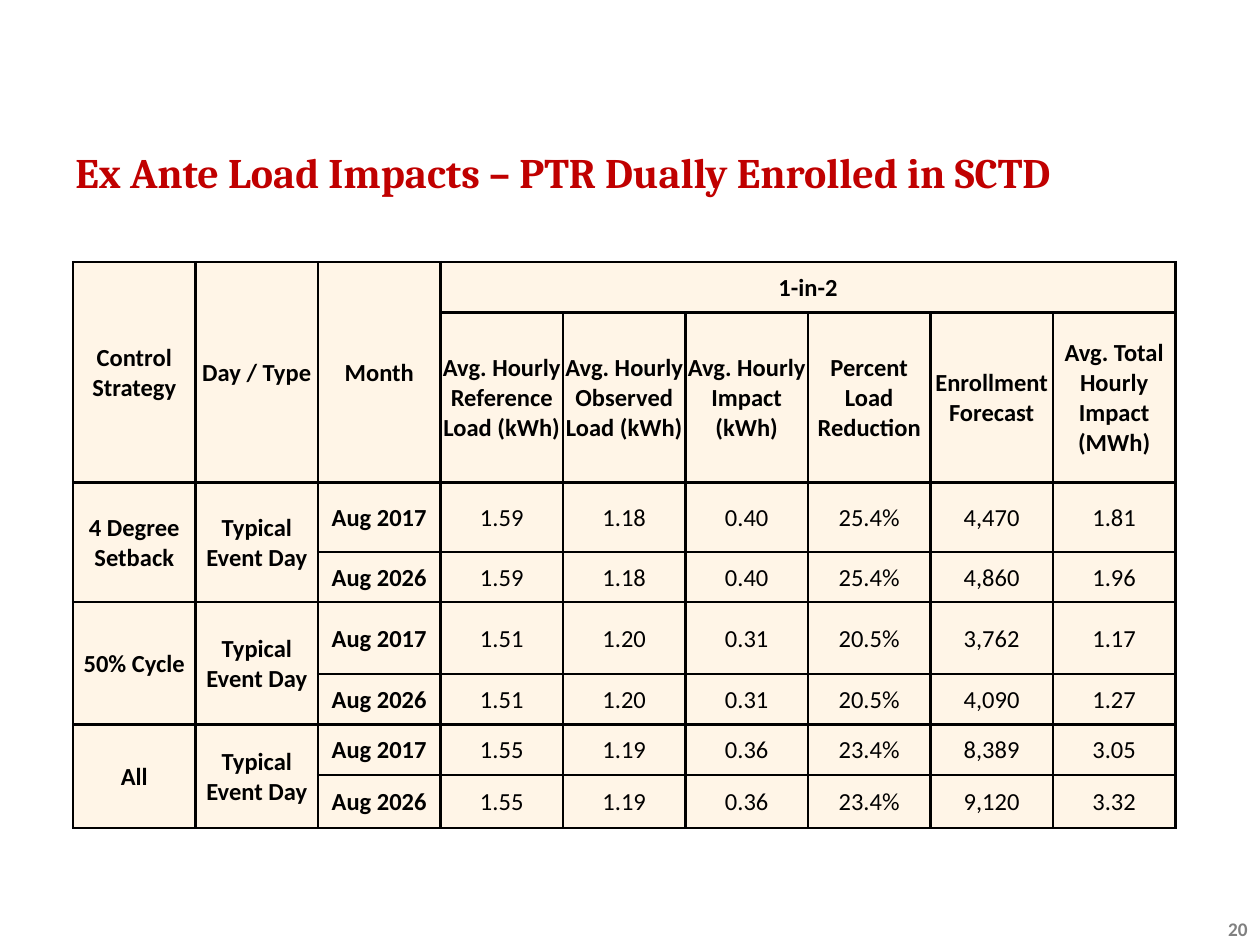
from lxml import etree
from pptx import Presentation
from pptx import util as u
from pptx.dml.color import RGBColor
from pptx.enum import text
from pptx.oxml.ns import qn

INK = {"title": "C00000", "page": "808080", "text": "000000",
       "line": "000000", "cell": "FFF5E7"}
WIDE, HIGH = u.Inches(10), u.Inches(7.5)
EDGE = u.Pt(1.5)


def write(frame, words, align, size, color, bold=True, face="Calibri"):
    frame.word_wrap = True
    para = frame.paragraphs[0]
    para.alignment = align
    run = para.add_run()
    run.text = words
    run.font.name, run.font.size, run.font.bold = face, u.Pt(size), bold
    run.font.color.rgb = RGBColor.from_string(INK[color])


def dress(cell):
    """Give a cell its borders, fill, margins and anchor."""
    props = cell._tc.get_or_add_tcPr()
    for side in ("a:lnL", "a:lnR", "a:lnT", "a:lnB"):
        line = etree.SubElement(props, qn(side), w=str(EDGE))
        fill = etree.SubElement(line, qn("a:solidFill"))
        etree.SubElement(fill, qn("a:srgbClr"), val=INK["line"])
    cell.fill.solid()
    cell.fill.fore_color.rgb = RGBColor.from_string(INK["cell"])
    cell.margin_left = cell.margin_right = cell.margin_top = u.Inches(0.01)
    cell.margin_bottom = 0
    cell.vertical_anchor = text.MSO_ANCHOR.MIDDLE


deck = Presentation()
deck.slide_width, deck.slide_height = WIDE, HIGH
slide = deck.slides.add_slide(deck.slide_layouts[6])

# Title and page number
title = slide.shapes.add_textbox(
    int(WIDE * 0.05), u.Inches(1), int(WIDE * 0.9), u.Inches(0.72)).text_frame
title.vertical_anchor = text.MSO_ANCHOR.MIDDLE
write(title, "Ex Ante Load Impacts – PTR Dually Enrolled in SCTD",
      text.PP_ALIGN.LEFT, 24, "title", face="Cambria")

page = slide.shapes.add_textbox(
    u.Inches(7.67), u.Inches(7.17), u.Inches(2.33), u.Inches(0.4)).text_frame
page.vertical_anchor = text.MSO_ANCHOR.MIDDLE
write(page, "20", text.PP_ALIGN.RIGHT, 11, "page")

# Table: None marks a cell covered by a merged one
DAY = "Typical Event Day"
rows = [
    ["Control Strategy", "Day / Type", "Month", "1-in-2"] + [None] * 5,
    [None, None, None, "Avg. Hourly Reference Load (kWh)",
     "Avg. Hourly Observed Load (kWh)", "Avg. Hourly Impact (kWh)",
     "Percent Load Reduction", "Enrollment Forecast",
     "Avg. Total Hourly Impact (MWh)"],
]
plans = [
    ("4 Degree Setback", ["1.59", "1.18", "0.40", "25.4%"],
     ["4,470", "1.81"], ["4,860", "1.96"]),
    ("50% Cycle", ["1.51", "1.20", "0.31", "20.5%"],
     ["3,762", "1.17"], ["4,090", "1.27"]),
    ("All", ["1.55", "1.19", "0.36", "23.4%"],
     ["8,389", "3.05"], ["9,120", "3.32"]),
]
for plan, loads, first, last in plans:
    rows.append([plan, DAY, "Aug 2017"] + loads + first)
    rows.append([None, None, "Aug 2026"] + loads + last)

tall = [0.4, 1.35, 0.55, 0.4, 0.57, 0.4, 0.4, 0.42]
cols = len(rows[0])
span = u.Inches(8.75)
grid = slide.shapes.add_table(
    len(rows), cols, u.Inches(0.58), u.Inches(2.08),
    span, u.Inches(sum(tall))).table
for col in grid.columns:
    col.width = span // cols
for row, size in zip(grid.rows, tall):
    row.height = u.Inches(size)

for r, row in enumerate(rows):
    for c, words in enumerate(row):
        cell = grid.cell(r, c)
        dress(cell)
        if words:
            write(cell.text_frame, words, text.PP_ALIGN.CENTER, 14, "text",
                  bold=r < 2 or c < 3)

grid.cell(0, 3).merge(grid.cell(0, cols - 1))
for c in range(3):
    for top in range(0, len(rows), 2):
        if rows[top + 1][c] is None:
            grid.cell(top, c).merge(grid.cell(top + 1, c))

deck.save("out.pptx")
